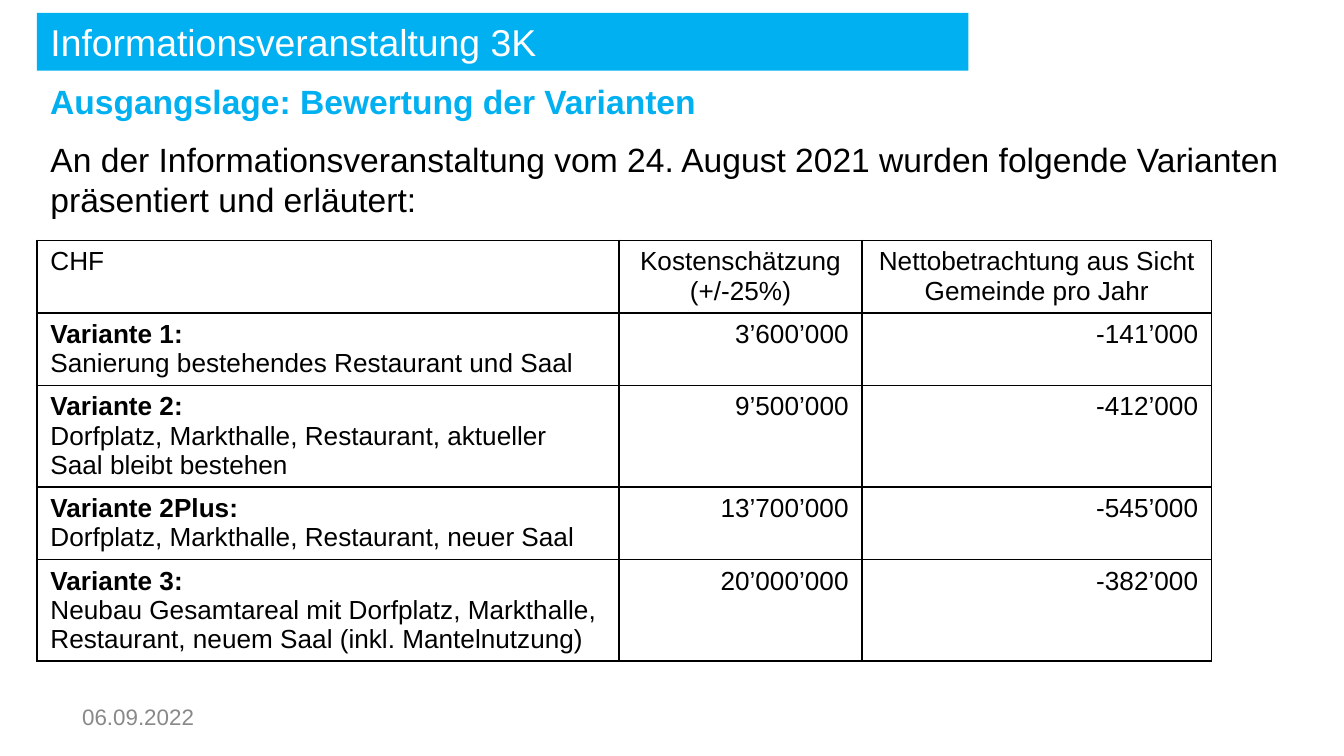
import pptx
import pptx.dml.color
import pptx.enum.text
import pptx.oxml
import pptx.oxml.ns
import pptx.util

BLUE = pptx.dml.color.RGBColor(0x00, 0xB0, 0xF0)
WHITE = pptx.dml.color.RGBColor(0xFF, 0xFF, 0xFF)
BLACK = pptx.dml.color.RGBColor(0x00, 0x00, 0x00)
GREY = pptx.dml.color.RGBColor(0x89, 0x89, 0x89)
LEFT = pptx.enum.text.PP_ALIGN.LEFT
CENTER = pptx.enum.text.PP_ALIGN.CENTER
RIGHT = pptx.enum.text.PP_ALIGN.RIGHT
TOP = pptx.enum.text.MSO_ANCHOR.TOP
MIDDLE = pptx.enum.text.MSO_ANCHOR.MIDDLE
NAMESPACE = pptx.oxml.ns.nsdecls("a")

presentation = pptx.Presentation()
presentation.slide_width = pptx.util.Inches(10)
presentation.slide_height = presentation.slide_width * 9 // 16
percent_width = presentation.slide_width / 100
percent_height = presentation.slide_height / 100
margin = 2.75
slide = presentation.slides.add_slide(presentation.slide_layouts[1])


def set_text(paragraph, text, size, color, bold=False, alignment=LEFT):
    paragraph.text = text
    paragraph.alignment = alignment
    paragraph.font.color.rgb = color
    font_format = {"name": "Arial", "size": pptx.util.Pt(size), "bold": bold}
    for attribute, value in font_format.items():
        setattr(paragraph.font, attribute, value)


def place_text(shape, area, anchor, text, size, color, bold=False):
    left, top, width, height = area
    position = {
        "left": round(left * percent_width),
        "top": round(top * percent_height),
        "width": round(width * percent_width),
        "height": round(height * percent_height),
    }
    for attribute, value in position.items():
        setattr(shape, attribute, value)
    frame_format = {
        "word_wrap": True,
        "auto_size": pptx.enum.text.MSO_AUTO_SIZE.NONE,
        "vertical_anchor": anchor,
    }
    for attribute, value in frame_format.items():
        setattr(shape.text_frame, attribute, value)
    set_text(shape.text_frame.paragraphs[0], text, size, color, bold)


title = slide.shapes.title
title.fill.solid()
title.fill.fore_color.rgb = BLUE
place_text(title, (margin, 1.7, 69.3, 7.65), MIDDLE, "Informationsveranstaltung 3K", 20, WHITE)

subtitle = slide.shapes.add_textbox(0, 0, 0, 0)
place_text(subtitle, (margin, 9.79, 89, 7.65), TOP,
           "Ausgangslage: Bewertung der Varianten", 18, BLUE, True)

body = slide.placeholders[1]
paragraph = body.text_frame.paragraphs[0]
properties = paragraph._p.get_or_add_pPr()
properties.set("marL", "0")
properties.set("indent", "0")
properties.append(pptx.oxml.parse_xml(f"<a:buNone {NAMESPACE}/>"))
paragraph_format = {
    "space_before": pptx.util.Pt(0),
    "space_after": pptx.util.Pt(6),
    "line_spacing": 1.0,
}
for attribute, value in paragraph_format.items():
    setattr(paragraph, attribute, value)
place_text(body, (margin, 17.44, 93.7, 78.11), TOP,
           "An der Informationsveranstaltung vom 24. August 2021 wurden folgende "
           "Varianten präsentiert und erläutert:", 18, BLACK)

variants = [
    (["CHF"], "Kostenschätzung (+/-25%)", "Nettobetrachtung aus Sicht Gemeinde pro Jahr"),
    (["Variante 1:", "Sanierung bestehendes Restaurant und Saal"], "3’600’000", "-141’000"),
    (["Variante 2:", "Dorfplatz, Markthalle, Restaurant, aktueller Saal bleibt bestehen"],
     "9’500’000", "-412’000"),
    (["Variante 2Plus:", "Dorfplatz, Markthalle, Restaurant, neuer Saal"],
     "13’700’000", "-545’000"),
    (["Variante 3:", "Neubau Gesamtareal mit Dorfplatz, Markthalle, Restaurant, "
      "neuem Saal (inkl. Mantelnutzung)"], "20’000’000", "-382’000"),
]
column_shares = [43.3, 18.1, 26]
row_shares = [9.6, 9.6, 13.4, 9.6, 13.4]
table = slide.shapes.add_table(
    len(row_shares), len(column_shares),
    round(margin * percent_width), round(31.8 * percent_height),
    round(sum(column_shares) * percent_width), round(sum(row_shares) * percent_height),
).table
table.first_row = False
table.horz_banding = False
for column, share in zip(table.columns, column_shares):
    column.width = round(share * percent_width)
for row, share in zip(table.rows, row_shares):
    row.height = round(share * percent_height)

for row_index, (description, cost, net_result) in enumerate(variants):
    number_alignment = RIGHT if row_index else CENTER
    contents = [(description, LEFT), ([cost], number_alignment), ([net_result], number_alignment)]
    for column_index, (lines, alignment) in enumerate(contents):
        cell = table.cell(row_index, column_index)
        for line_index, line in enumerate(lines):
            frame = cell.text_frame
            paragraph = frame.add_paragraph() if line_index else frame.paragraphs[0]
            is_heading = len(lines) > 1 and line_index == 0
            set_text(paragraph, line, 14, BLACK, is_heading, alignment)
        cell_properties = cell._tc.get_or_add_tcPr()
        for side in ("lnL", "lnR", "lnT", "lnB"):
            cell_properties.append(pptx.oxml.parse_xml(
                f'<a:{side} {NAMESPACE} w="12700"><a:solidFill>'
                f'<a:srgbClr val="{BLACK}"/></a:solidFill></a:{side}>'))
        cell.fill.background()

date = slide.shapes.add_textbox(0, 0, 0, 0)
place_text(date, (5.13, 92.1, 23.3, 5.34), MIDDLE, "06.09.2022", 12, GREY)

presentation.save("out.pptx")
